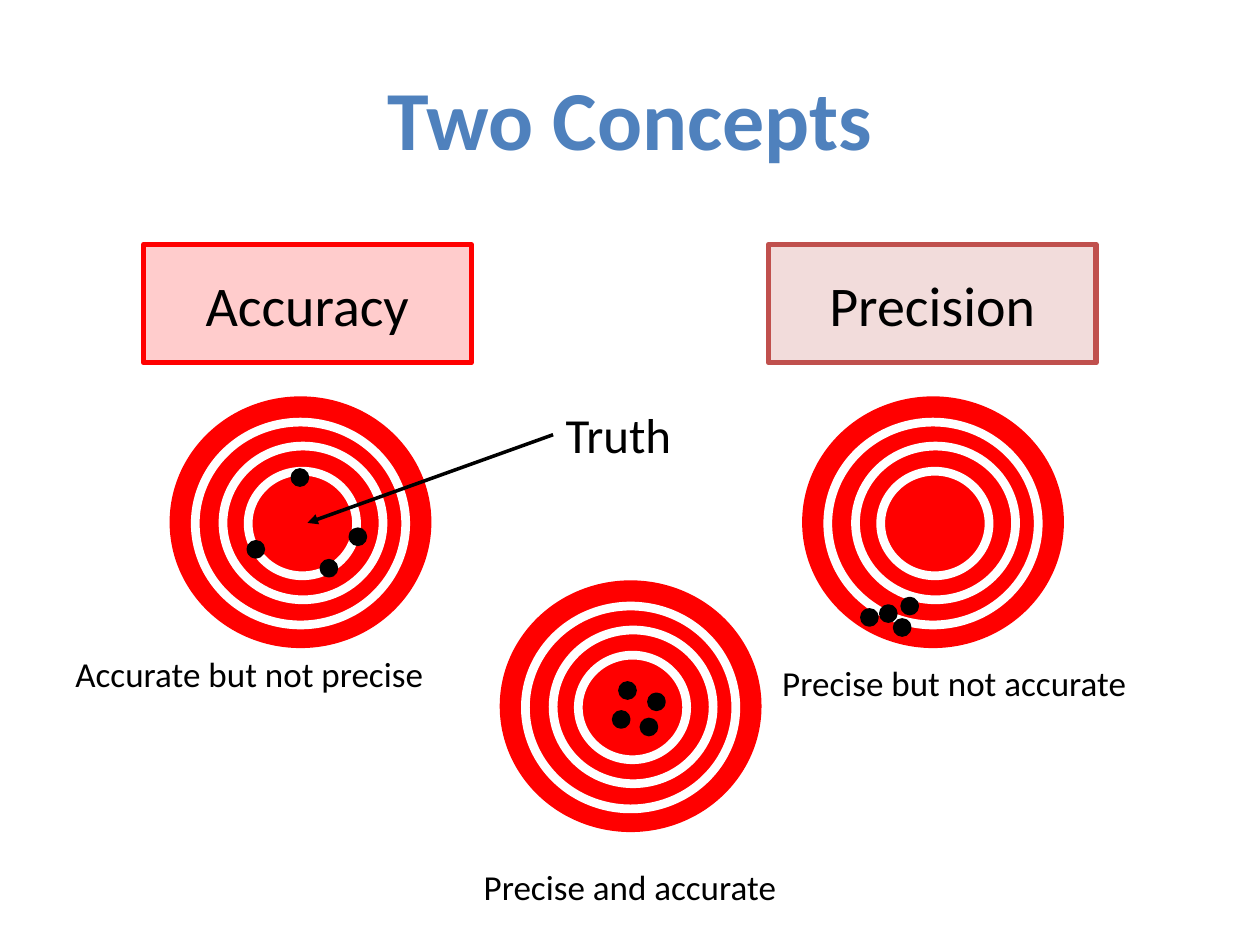
from lxml import etree
from pptx import Presentation
from pptx.dml.color import RGBColor
from pptx.enum.shapes import MSO_CONNECTOR, MSO_SHAPE
from pptx.enum.text import MSO_ANCHOR, PP_ALIGN
from pptx.oxml.ns import qn
from pptx.util import Inches, Pt

RECTANGLE, ELLIPSE = MSO_SHAPE.RECTANGLE, MSO_SHAPE.OVAL
STRAIGHT = MSO_CONNECTOR.STRAIGHT
MIDDLE, TOP = MSO_ANCHOR.MIDDLE, MSO_ANCHOR.TOP
LEFT, CENTER = PP_ALIGN.LEFT, PP_ALIGN.CENTER

RED, BRICK, BLUE = "FF0000", "C0504D", "4F81BD"
BLACK, WHITE = "000000", "FFFFFF"

# Offset from the target's corner, then size
RINGS = [(0.19, 0.19, 1.67, 1.61), (0.41, 0.38, 1.27, 1.22), (0.61, 0.58, 0.86, 0.83)]
TARGET_SIZE = (2.05, 1.97)
DOT_SIZE = (0.12, 0.12)

# Corner of each target and of the shots on it
TARGETS = [
    ((6.38, 3.16), [(6.84, 4.84), (7.1, 4.92), (7.16, 4.75), (6.99, 4.81)]),
    ((1.36, 3.16), [(2.78, 4.2), (2.55, 4.45), (1.97, 4.3), (2.32, 3.73)]),
    ((3.98, 4.62), [(4.92, 5.42), (5.09, 5.71), (4.87, 5.65), (5.15, 5.51)]),
]
CONCEPTS = [("Accuracy", 1.14, RED), ("Precision", 6.1, BRICK)]
CAPTIONS = [
    ("Accurate but not precise", 0.5, 5.13, LEFT),
    ("Precise but not accurate", 6.11, 5.2, LEFT),
    ("Precise and accurate", 3.26, 6.82, CENTER),
]


def color(value):
    return RGBColor.from_string(value)


def write(frame, text, size, font, ink=BLACK, bold=False, align=LEFT, anchor=TOP, wrap=True):
    frame.word_wrap = wrap
    frame.vertical_anchor = anchor
    para = frame.paragraphs[0]
    para.alignment = align
    span = para.add_run()
    span.text = text
    span.font.name = font
    span.font.size = Pt(size)
    span.font.bold = bold
    span.font.color.rgb = color(ink)


class Page:
    def __init__(self, deck, font="Calibri"):
        self.shapes = deck.slides.add_slide(deck.slide_layouts[6]).shapes
        self.font = font

    def text(self, text, bounds, size, **style):
        box = self.shapes.add_textbox(*map(Inches, bounds))
        write(box.text_frame, text, size, self.font, **style)

    def shape(self, kind, bounds, line, width, fill=None, opacity=None, parent=None):
        shape = (parent or self.shapes).add_shape(kind, *map(Inches, bounds))
        shape.shadow.inherit = False
        shape.line.color.rgb = color(line)
        shape.line.width = Pt(width)
        if fill is None:
            shape.fill.background()
            return shape
        shape.fill.solid()
        shape.fill.fore_color.rgb = color(fill)
        if opacity is not None:
            tint = shape.fill._xPr.find(qn("a:solidFill"))[0]
            etree.SubElement(tint, qn("a:alpha"), val=str(opacity * 1000))
        return shape

    def concept(self, text, left, hue):
        box = self.shape(RECTANGLE, (left, 1.94, 2.6, 0.94), hue, 3, hue, opacity=20)
        write(box.text_frame, text, 32, self.font, align=CENTER, anchor=MIDDLE, wrap=False)

    def target(self, corner, shots):
        left, top = corner
        group = self.shapes.add_group_shape().shapes
        self.shape(ELLIPSE, (left, top, *TARGET_SIZE), RED, 2, RED, parent=group)
        for dx, dy, width, height in RINGS:
            self.shape(ELLIPSE, (left + dx, top + dy, width, height), WHITE, 5, parent=group)
        for shot in shots:
            self.shape(ELLIPSE, (*shot, *DOT_SIZE), BLACK, 2, BLACK)

    def arrow(self, start, end):
        line = self.shapes.add_connector(STRAIGHT, *map(Inches, (*start, *end)))
        line.line.color.rgb = color(BLACK)
        line.line.width = Pt(2)
        etree.SubElement(line.line._get_or_add_ln(), qn("a:tailEnd"), type="triangle")
        etree.SubElement(line._element.spPr, qn("a:effectLst"))


def main():
    deck = Presentation()
    deck.slide_width, deck.slide_height = Inches(10), Inches(7.5)
    page = Page(deck)
    page.text("Two Concepts", (0.5, 0.3, 9, 1.25), 48,
              ink=BLUE, bold=True, align=CENTER, anchor=MIDDLE)
    for concept in CONCEPTS:
        page.concept(*concept)
    for corner, shots in TARGETS:
        page.target(corner, shots)
    page.text("Truth", (4.39, 3.16, 1.27, 0.57), 28)
    page.arrow((4.39, 3.45), (2.44, 4.15))
    for text, left, top, align in CAPTIONS:
        page.text(text, (left, top, 3.48, 0.44), 20, align=align)
    deck.save("out.pptx")


if __name__ == "__main__":
    main()
